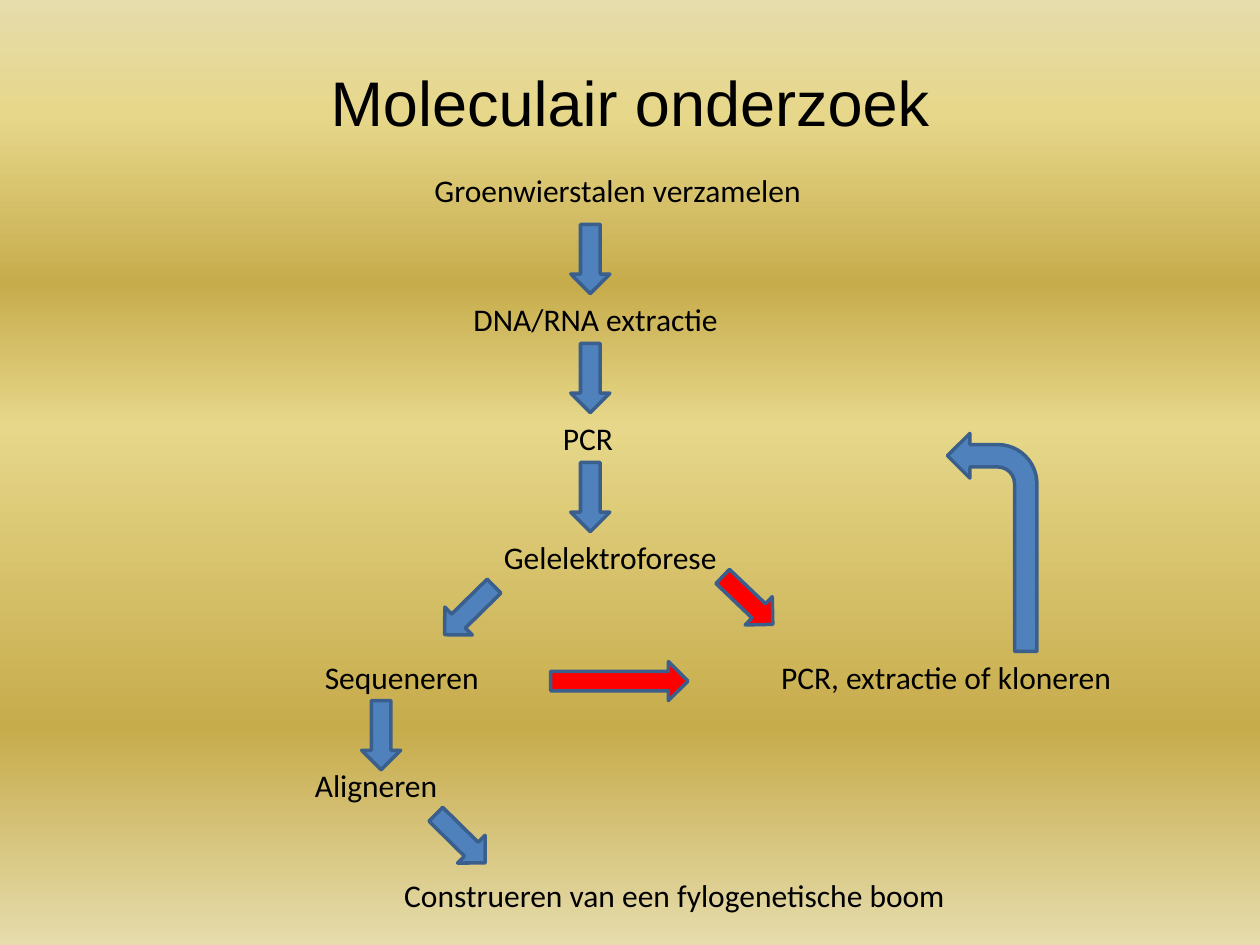
import lxml.etree
import pptx
import pptx.util
import pptx.dml.color
import pptx.enum.shapes
import pptx.enum.text
import pptx.oxml.ns

INK = {"text": "000000", "blue": "4F81BD", "edge": "3A5F8C", "red": "FF0000",
       "pale": "E6DCAC", "light": "E6D78A", "gold": "C7AC4C"}
BANDS = [(0, "pale"), (12, "light"), (30, "gold"),
         (45, "light"), (77, "gold"), (100, "pale")]
KIND = pptx.enum.shapes.MSO_SHAPE
CELL = pptx.util.Inches(0.1)


def color(name):
    return pptx.dml.color.RGBColor.from_string(INK[name])


def write(frame, text, font="Calibri", size=18, tint="text", align=None):
    para = frame.paragraphs[0]
    para.alignment = align
    run = para.add_run()
    run.text = text
    run.font.name = font
    run.font.size = pptx.util.Pt(size)
    run.font.color.rgb = color(tint)


class Board:
    def __init__(self, deck):
        self.slide = deck.slides.add_slide(deck.slide_layouts[6])
        self.line = pptx.util.Pt(2)

    def area(self, *cells):
        return [round(cell * CELL) for cell in cells]

    def ground(self, bands):
        fill = self.slide.background.fill
        fill.gradient()
        fill.gradient_angle = 270
        name = pptx.oxml.ns.qn
        stops = self.slide.element.find(".//" + name("a:gsLst"))
        for stop in list(stops):
            stops.remove(stop)
        for place, tint in bands:
            stop = lxml.etree.SubElement(stops, name("a:gs"), pos=str(place * 1000))
            lxml.etree.SubElement(stop, name("a:srgbClr"), val=INK[tint])

    def title(self, text, *cells):
        frame = self.slide.shapes.add_textbox(*self.area(*cells)).text_frame
        frame.word_wrap = True
        frame.vertical_anchor = pptx.enum.text.MSO_ANCHOR.MIDDLE
        write(frame, text, font="Arial", size=36,
              align=pptx.enum.text.PP_ALIGN.CENTER)

    def label(self, text, col, row, width):
        box = self.slide.shapes.add_textbox(*self.area(col, row, width, 4))
        box.text_frame.word_wrap = False
        box.text_frame.auto_size = pptx.enum.text.MSO_AUTO_SIZE.SHAPE_TO_FIT_TEXT
        write(box.text_frame, text)

    def arrow(self, col, row, width=3.1, height=5.5, turn=0, tint="blue",
              kind=KIND.DOWN_ARROW):
        shape = self.slide.shapes.add_shape(kind, *self.area(col, row, width, height))
        shape.shadow.inherit = False
        shape.rotation = turn
        shape.fill.solid()
        shape.fill.fore_color.rgb = color(tint)
        shape.line.color.rgb = color("edge")
        shape.line.width = self.line
        return shape

    def bend(self, *cells):
        shape = self.arrow(*cells, kind=KIND.BENT_ARROW)
        shape.element.spPr.xfrm.set("flipH", "1")


def main():
    deck = pptx.Presentation()
    deck.slide_width, deck.slide_height = 100 * CELL, 75 * CELL
    board = Board(deck)
    board.ground(BANDS)
    board.title("Moleculair onderzoek", 5, 3, 90, 10.1)

    for text, col, row, width in [
        ("Groenwierstalen verzamelen", 33.5, 13.1, 32),
        ("DNA/RNA extractie", 36.6, 23.3, 21.6),
        ("PCR", 43.7, 32.8, 6),
        ("Gelelektroforese", 39, 42.2, 19.1),
        ("Sequeneren", 24.8, 51.7, 14.4),
        ("Aligneren", 24, 60.3, 11.9),
        ("Construeren van een fylogenetische boom", 31.1, 69, 46.1),
        ("PCR, extractie of kloneren", 61, 51.7, 28.5),
    ]:
        board.label(text, col, row, width)

    for step in range(3):
        board.arrow(45.3, 17.8 + 9.45 * step)
    board.arrow(35.7, 45.7, turn=45.5)
    board.arrow(28.7, 55.6)
    board.arrow(35, 63.8, turn=314.6)
    board.arrow(57.8, 44.9, turn=313.7, tint="red")
    board.arrow(47.6, 48.6, height=10.9, turn=270, tint="red")
    board.bend(75.2, 34.4, 7.1, 17.3)
    deck.save("out.pptx")


if __name__ == "__main__":
    main()
